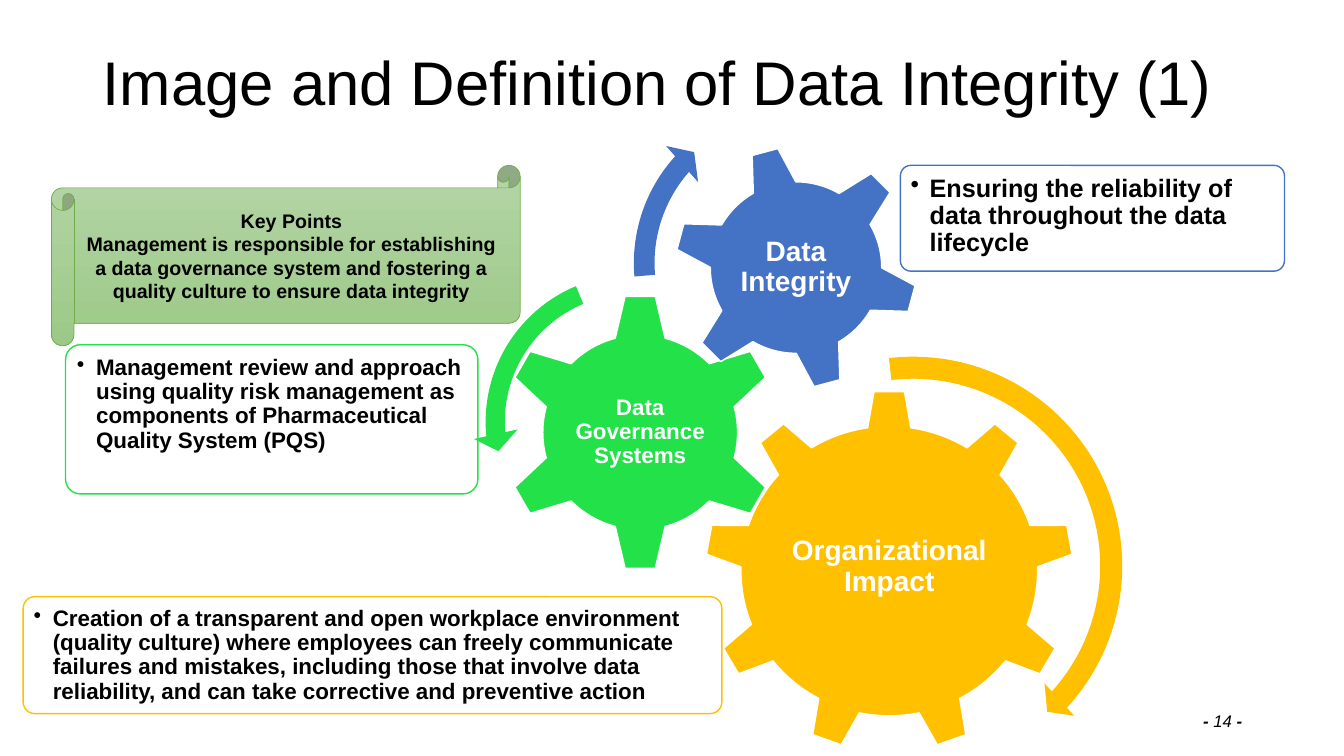
"""Build the data integrity slide with three gears and their notes."""
from lxml import etree
from pptx import Presentation
from pptx.dml.color import RGBColor
from pptx.enum import shapes, text
from pptx.oxml import ns
from pptx.util import Inches, Pt

M = shapes.MSO_SHAPE
A = text.PP_ALIGN
V = text.MSO_ANCHOR
BLACK, WHITE = "000000", "FFFFFF"
BLUE, GREEN, ORANGE = "4472C4", "23E148", "FFC000"

TITLE = "Image and Definition of Data Integrity (1)"
TOPICS = [
    {
        "color": ORANGE, "gear": M.GEAR_9, "at": (6.99, 3.87, 3.66, 3.59), "turn": 0,
        "label": "Organizational Impact", "label_size": 20, "label_box": (2.2, 1.84), "lift": 0.04,
        "card": (0.23, 5.92, 6.93, 1.16), "note_size": 16,
        "note": "Creation of a transparent and open workplace environment (quality culture) "
                "where employees can freely communicate failures and mistakes, including those "
                "that involve data reliability, and can take corrective and preventive action",
    },
    {
        "color": GREEN, "gear": M.GEAR_6, "at": (4.97, 2.91, 2.76, 2.76), "turn": 0,
        "label": "Data Governance Systems", "label_size": 16, "label_box": (1.37, 1.36), "lift": 0,
        "card": (0.65, 3.42, 4.09, 1.48), "note_size": 16,
        "note": "Management review and approach using quality risk management as components "
                "of Pharmaceutical Quality System (PQS)",
    },
    {
        "color": BLUE, "gear": M.GEAR_6, "at": (6.68, 1.44, 2.43, 2.43), "turn": 345,
        "label": "Data Integrity", "label_size": 20, "label_box": (1.36, 1.36), "lift": 0,
        "card": (8.93, 1.64, 3.81, 1.05), "note_size": 18,
        "note": "Ensuring the reliability of data throughout the data lifecycle",
    },
]
ARROWS = [
    (M.CIRCULAR_ARROW, (6.87, 3.43, 4.37, 4.37), ORANGE, (0.05, 2.99, 25.43, 158.05, 0.05)),
    (M.LEFT_CIRCULAR_ARROW, (4.69, 2.6, 3.17, 3.17), GREEN, (0.06, 4.3, 104.89, 148.38, 0.07)),
    (M.CIRCULAR_ARROW, (6.15, 0.9, 3.42, 3.42), BLUE, (0.06, 3.94, 133.14, 105.08, 0.07)),
]
KEY_POINTS = [
    "Key Points",
    "Management is responsible for establishing a data governance system and "
    "fostering a quality culture to ensure data integrity",
]
PAGE = [("- ", True), ("14", False), (" -", True)]


def rgb(value):
    return RGBColor.from_string(value)


def inches(box):
    return [Inches(n) for n in box]


def add_run(p, words, size, color=BLACK, bold=True, italic=False):
    r = p.add_run()
    r.text = words
    r.font.name, r.font.size = "Arial", Pt(size)
    r.font.bold, r.font.italic = bold, italic
    r.font.color.rgb = rgb(color)


def set_frame(sp, anchor, inset=None):
    tf = sp.text_frame
    tf.word_wrap, tf.auto_size, tf.vertical_anchor = True, text.MSO_AUTO_SIZE.NONE, anchor
    if inset is not None:
        tf.margin_left = tf.margin_right = tf.margin_top = tf.margin_bottom = Inches(inset)
    return tf


def add_shape(s, kind, box, fill=None, line=None, width=1):
    sp = s.shapes.add_shape(kind, *inches(box))
    sp.shadow.inherit = False
    if fill:
        sp.fill.solid()
        sp.fill.fore_color.rgb = rgb(fill)
    if line:
        sp.line.color.rgb = rgb(line)
        sp.line.width = Pt(width)
    else:
        sp.line.fill.background()
    return sp


def add_gear(s, topic):
    x, y, w, h = topic["at"]
    gear = add_shape(s, topic["gear"], topic["at"], topic["color"], WHITE)
    gear.rotation = topic["turn"]
    tw, th = topic["label_box"]
    box = (x + (w - tw) / 2, y + (h - th) / 2 - topic["lift"], tw, th)
    p = set_frame(s.shapes.add_textbox(*inches(box)), V.MIDDLE, 0.03).paragraphs[0]
    p.alignment, p.line_spacing = A.CENTER, 0.9
    add_run(p, topic["label"], topic["label_size"], WHITE)


def add_card(s, topic):
    card = add_shape(s, M.ROUNDED_RECTANGLE, topic["card"], WHITE, topic["color"])
    card.adjustments[0] = 0.1
    color = card.fill._xPr.find(ns.qn("a:solidFill"))[0]
    etree.SubElement(color, ns.qn("a:alpha"), val="90000")
    p = set_frame(card, V.TOP, 0.07).paragraphs[0]
    p.alignment, p.line_spacing = A.LEFT, 0.9
    pPr = p._p.get_or_add_pPr()
    pPr.set("marL", str(Inches(0.19)))
    pPr.set("indent", str(-Inches(0.19)))
    etree.SubElement(pPr, ns.qn("a:buChar"), char="•")
    add_run(p, topic["note"], topic["note_size"])


def add_scroll(s):
    scroll = add_shape(s, M.HORIZONTAL_SCROLL, (0.51, 1.64, 4.65, 1.79), line="70AD47", width=0.5)
    scroll.fill.gradient()
    scroll.fill.gradient_angle = 270
    for stop, color in zip(scroll.fill.gradient_stops, ("B5D5A7", "9CC987")):
        stop.color.rgb = rgb(color)
    tf = set_frame(scroll, V.MIDDLE)
    for i, words in enumerate(KEY_POINTS):
        p = tf.add_paragraph() if i else tf.paragraphs[0]
        p.alignment = A.CENTER
        add_run(p, words, 14)


def main():
    prs = Presentation()
    prs.slide_width, prs.slide_height = Inches(13.33), Inches(7.5)
    s = prs.slides.add_slide(prs.slide_layouts[5])
    title = s.shapes.title
    title.left, title.top, title.width, title.height = inches((0.92, 0.08, 11.5, 1.45))
    p = set_frame(title, V.MIDDLE).paragraphs[0]
    p.alignment = A.LEFT
    add_run(p, TITLE, 44, bold=False)

    for topic in TOPICS:
        add_gear(s, topic)
        add_card(s, topic)
    for kind, box, color, bends in ARROWS:
        arrow = add_shape(s, kind, box, color)
        for i, bend in enumerate(bends):
            arrow.adjustments[i] = bend
    add_scroll(s)

    page = s.shapes.add_textbox(*inches((9.42, 6.95, 3, 0.4)))
    p = set_frame(page, V.MIDDLE).paragraphs[0]
    p.alignment = A.RIGHT
    for words, bold in PAGE:
        add_run(p, words, 12, bold=bold, italic=True)
    prs.save("out.pptx")


if __name__ == "__main__":
    main()
